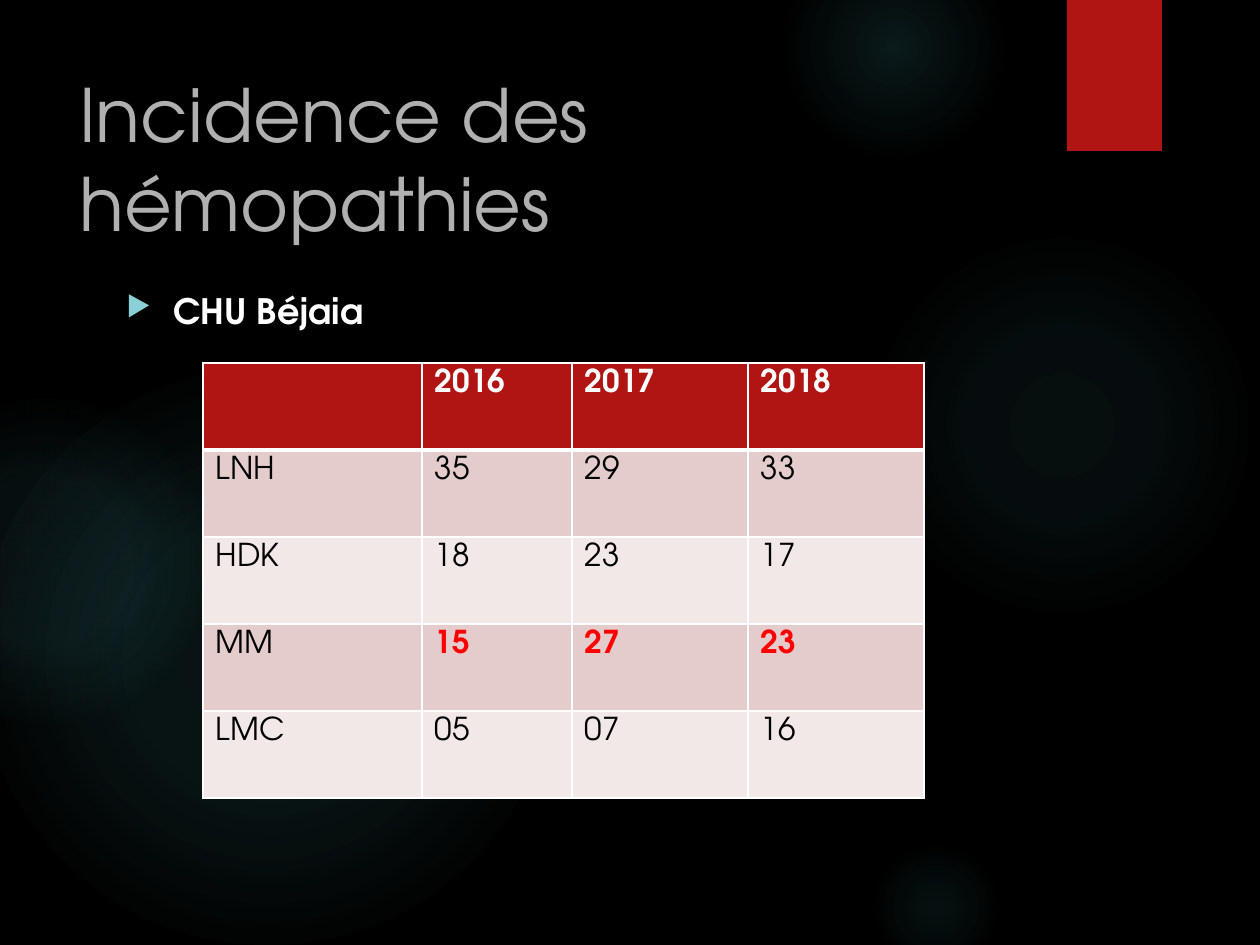
from dataclasses import dataclass

from lxml.etree import SubElement
from pptx import Presentation
from pptx.dml.color import RGBColor
from pptx.enum.shapes import MSO_SHAPE
from pptx.enum.text import MSO_ANCHOR
from pptx.oxml import parse_xml
from pptx.oxml.ns import nsdecls, qn
from pptx.util import Emu, Pt

FONT = "TeX Gyre Adventor"
BLACK = RGBColor(0x00, 0x00, 0x00)
WHITE = RGBColor(0xFF, 0xFF, 0xFF)
GREY = RGBColor(0xB0, 0xB0, 0xB0)
CRIMSON = RGBColor(0xB0, 0x15, 0x13)
RED = RGBColor(0xFF, 0x00, 0x00)
BANDS = (RGBColor(0xF2, 0xE8, 0xE7), RGBColor(0xE4, 0xCC, 0xCC))
GLOW = RGBColor(0x50, 0xB9, 0xC1)
BULLET = RGBColor(0x8A, 0xD0, 0xD6)


def px(n: int) -> Emu:
    return Emu(round(n * 914400 / 126))


@dataclass
class Glow:
    x: int
    y: int
    size: int
    stops: tuple  # (position %, opacity %)


GLOWS = [
    Glow(868, 231, 388, ((0, 7), (36, 6), (69, 0))),
    Glow(784, -63, 220, ((0, 14), (36, 7), (73, 0))),
    Glow(868, 840, 136, ((0, 9), (36, 5), (66, 0))),
    Glow(-21, 368, 577, ((0, 11), (36, 10), (75, 0))),
    Glow(-116, 399, 325, ((0, 8), (36, 8), (72, 0))),
]

ROWS = [
    ("", "2016", "2017", "2018"),
    ("LNH", "35", "29", "33"),
    ("HDK", "18", "23", "17"),
    ("MM", "15", "27", "23"),
    ("LMC", "05", "07", "16"),
]
COL_WIDTHS = (219, 150, 176, 176)
ROW_HEIGHT = 87


def add_run(p, text: str, size: int, color: RGBColor, bold: bool = False) -> None:
    r = p.add_run()
    r.text = text
    r.font.name = FONT
    r.font.size = Pt(size)
    r.font.bold = bold
    r.font.color.rgb = color


def add_glow(s, glow: Glow) -> None:
    sp = s.shapes.add_shape(MSO_SHAPE.OVAL, px(glow.x), px(glow.y),
                            px(glow.size), px(glow.size))
    sp.shadow.inherit = False
    sp.line.fill.background()
    stops = "".join(
        f'<a:gs pos="{pos * 1000}"><a:srgbClr val="{GLOW}">'
        f'<a:alpha val="{alpha * 1000}"/></a:srgbClr></a:gs>'
        for pos, alpha in glow.stops)
    # The fill follows the position and the geometry
    sp._element.spPr.insert(2, parse_xml(
        f'<a:gradFill {nsdecls("a")}><a:gsLst>{stops}</a:gsLst>'
        '<a:path path="circle">'
        '<a:fillToRect l="50000" t="50000" r="50000" b="50000"/>'
        '</a:path></a:gradFill>'))


def add_ribbon(s) -> None:
    sp = s.shapes.add_shape(MSO_SHAPE.RECTANGLE, px(1067), px(0), px(95), px(151))
    sp.fill.solid()
    sp.fill.fore_color.rgb = CRIMSON
    sp.line.fill.background()
    sp.shadow.inherit = False
    effects = sp._element.spPr.find(qn("a:effectLst"))
    effects.append(parse_xml(
        f'<a:outerShdw {nsdecls("a")} blurRad="{Pt(3)}" dist="{Pt(2)}" '
        f'dir="5400000" rotWithShape="0"><a:srgbClr val="{BLACK}">'
        '<a:alpha val="45000"/></a:srgbClr></a:outerShdw>'))


def add_text_box(s, x: int, y: int, w: int, h: int, anchor: MSO_ANCHOR):
    tf = s.shapes.add_textbox(px(x), px(y), px(w), px(h)).text_frame
    tf.word_wrap = True
    tf.vertical_anchor = anchor
    return tf.paragraphs[0]


def add_bullet(p, indent: int) -> None:
    pPr = p._p.get_or_add_pPr()
    pPr.set("marL", str(px(indent)))
    pPr.set("indent", str(-px(indent)))
    color = SubElement(pPr, qn("a:buClr"))
    SubElement(color, qn("a:srgbClr"), val=str(BULLET))
    SubElement(pPr, qn("a:buSzPct"), val="80000")
    SubElement(pPr, qn("a:buChar"), char="▶")


def set_borders(cell, top: int, bottom: int) -> None:
    tcPr = cell._tc.get_or_add_tcPr()
    widths = {"lnL": 1, "lnR": 1, "lnT": top, "lnB": bottom}
    for i, (side, width) in enumerate(widths.items()):
        tcPr.insert(i, parse_xml(
            f'<a:{side} {nsdecls("a")} w="{Pt(width)}"><a:solidFill>'
            f'<a:srgbClr val="{WHITE}"/></a:solidFill></a:{side}>'))


def add_incidence_table(s) -> None:
    table = s.shapes.add_table(len(ROWS), len(COL_WIDTHS), px(203), px(363),
                               px(sum(COL_WIDTHS)),
                               px(ROW_HEIGHT * len(ROWS))).table
    for column, width in zip(table.columns, COL_WIDTHS):
        column.width = px(width)
    for i, values in enumerate(ROWS):
        table.rows[i].height = px(ROW_HEIGHT)
        for j, value in enumerate(values):
            cell = table.cell(i, j)
            cell.margin_left = cell.margin_right = px(13)
            cell.margin_top = cell.margin_bottom = px(6)
            cell.vertical_anchor = MSO_ANCHOR.TOP
            cell.fill.solid()
            cell.fill.fore_color.rgb = CRIMSON if i == 0 else BANDS[i % 2]
            set_borders(cell, 3 if i == 1 else 1, 3 if i == 0 else 1)
            highlighted = values[0] == "MM" and j > 0
            color = WHITE if i == 0 else RED if highlighted else BLACK
            if value:
                add_run(cell.text_frame.paragraphs[0], value, 18, color,
                        i == 0 or highlighted)


def main() -> None:
    prs = Presentation()
    prs.slide_width, prs.slide_height = px(1260), px(945)
    s = prs.slides.add_slide(prs.slide_layouts[6])

    # Background
    s.background.fill.solid()
    s.background.fill.fore_color.rgb = BLACK
    for glow in GLOWS:
        add_glow(s, glow)
    add_ribbon(s)

    # Title
    p = add_text_box(s, 67, 61, 973, 193, MSO_ANCHOR.MIDDLE)
    add_run(p, "Incidence des hémopathies", 42, GREY)

    # Hospital
    p = add_text_box(s, 114, 283, 925, 578, MSO_ANCHOR.TOP)
    p.space_before = Pt(10)
    add_bullet(p, 47)
    add_run(p, "CHU Béjaia", 20, WHITE, True)

    # Yearly cases
    add_incidence_table(s)

    prs.save("out.pptx")


if __name__ == "__main__":
    main()
